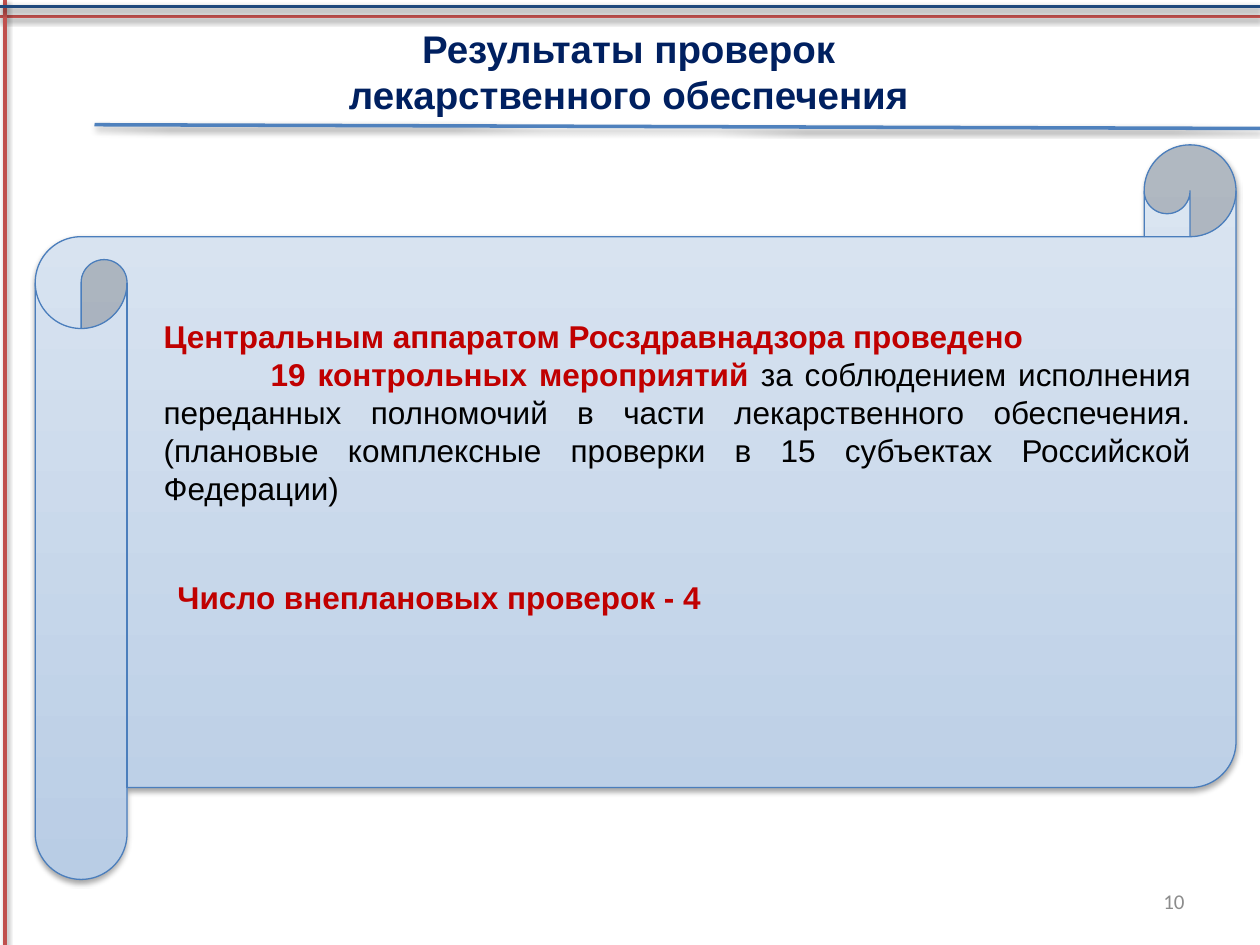
from lxml import etree
from pptx import Presentation, util as u
from pptx.dml.color import RGBColor
from pptx.enum import shapes, text
from pptx.oxml.ns import qn

COLORS = {
    "red": "C0504D", "navy": "1F497D", "blue": "4F81BD", "outline": "4B7EBC",
    "scroll_dark": "B9CDE5", "scroll_light": "DCE6F2", "title": "002060",
    "accent": "C00000", "body": "000000", "number": "8C8C8C", "shadow": "000000",
}
COLS, ROWS = 100, 75


def rgb(name):
    return RGBColor.from_string(COLORS[name])


def write(p, content, font="Arial", size=18, color="body", bold=False):
    r = p.add_run()
    r.text = content
    r.font.name, r.font.size, r.font.bold = font, u.Pt(size), bold
    r.font.color.rgb = rgb(color)


class Deck:
    """Holds the slide grid, the shared style and the current slide."""

    def __init__(self):
        self.prs = Presentation()
        self.prs.slide_width, self.prs.slide_height = u.Inches(10), u.Inches(7.5)
        self.s = self.prs.slides.add_slide(self.prs.slide_layouts[6])

    def x(self, cols):
        return round(self.prs.slide_width * cols / COLS)

    def y(self, rows):
        return round(self.prs.slide_height * rows / ROWS)

    def box(self, left, top, width, height):
        return self.x(left), self.y(top), self.x(width), self.y(height)

    def cast_shadow(self, sp, opacity, distance):
        effects = etree.SubElement(sp._element.spPr, qn("a:effectLst"))
        shadow = etree.SubElement(
            effects, qn("a:outerShdw"), blurRad=str(u.Pt(3.1)),
            dist=str(u.Pt(distance)), dir="5400000", rotWithShape="0")
        tint = etree.SubElement(shadow, qn("a:srgbClr"), val=COLORS["shadow"])
        etree.SubElement(tint, qn("a:alpha"), val=str(opacity * 1000))

    def rule(self, x1, y1, x2, y2, color):
        line = self.s.shapes.add_connector(
            shapes.MSO_CONNECTOR.STRAIGHT,
            self.x(x1), self.y(y1), self.x(x2), self.y(y2))
        line.line.color.rgb = rgb(color)
        line.line.width = u.Pt(2)
        self.cast_shadow(line, 38, 1.6)

    def scroll(self, *area):
        sp = self.s.shapes.add_shape(
            shapes.MSO_SHAPE.HORIZONTAL_SCROLL, *self.box(*area))
        sp.fill.gradient()
        sp.fill.gradient_angle = 90
        for stop, color in zip(sp.fill.gradient_stops, ("scroll_dark", "scroll_light")):
            stop.color.rgb = rgb(color)
        sp.line.color.rgb = rgb("outline")
        sp.line.width = u.Pt(0.75)
        self.cast_shadow(sp, 35, 1.8)

    def text(self, area, paragraphs, align, wrap=True, anchor="TOP", indents=None, **style):
        """Each paragraph is a list of (content, format overrides) runs."""
        tf = self.s.shapes.add_textbox(*self.box(*area)).text_frame
        tf.word_wrap = wrap
        tf.vertical_anchor = text.MSO_ANCHOR[anchor]
        for i, runs in enumerate(paragraphs):
            p = tf.paragraphs[0] if i == 0 else tf.add_paragraph()
            p.alignment = text.PP_ALIGN[align]
            if indents and indents[i]:
                p._p.get_or_add_pPr().set("indent", str(self.x(indents[i])))
            for content, overrides in runs:
                write(p, content, **{**style, **overrides})


def main():
    deck = Deck()
    deck.rule(0, 1.3, COLS, 1.3, "red")
    deck.rule(0.4, 0, 0.4, ROWS, "red")
    deck.rule(0, 0.5, COLS, 0.5, "navy")
    deck.scroll(2.8, 11.5, 95.3, 58.3)
    deck.text((71.7, 69.5, 23.3, 4), [[("10", {})]], "RIGHT", anchor="MIDDLE",
              font="Calibri", size=12, color="number")
    deck.rule(7.5, 9.9, COLS, 10.2, "blue")
    deck.text((26.4, 1.5, 47, 8.4),
              [[("Результаты проверок", {})], [("лекарственного обеспечения", {})]],
              "CENTER", wrap=False, size=22, color="title", bold=True)
    plain = {"color": "body", "bold": False}
    deck.text((12, 24.7, 83.5, 16.2), [
        [("Центральным аппаратом Росздравнадзора проведено", {})],
        [("19 контрольных мероприятий ", {}),
         ("за соблюдением исполнения переданных полномочий в части лекарственного "
          "обеспечения. (плановые комплексные проверки в 15 субъектах Российской "
          "Федерации)", plain)],
    ], "JUSTIFY", indents=(0, 8.5), color="accent", bold=True)
    deck.text((13.1, 45.4, 47.1, 4), [[("Число внеплановых проверок - 4", {})]],
              "JUSTIFY", color="accent", bold=True)
    deck.prs.save("out.pptx")


if __name__ == "__main__":
    main()
